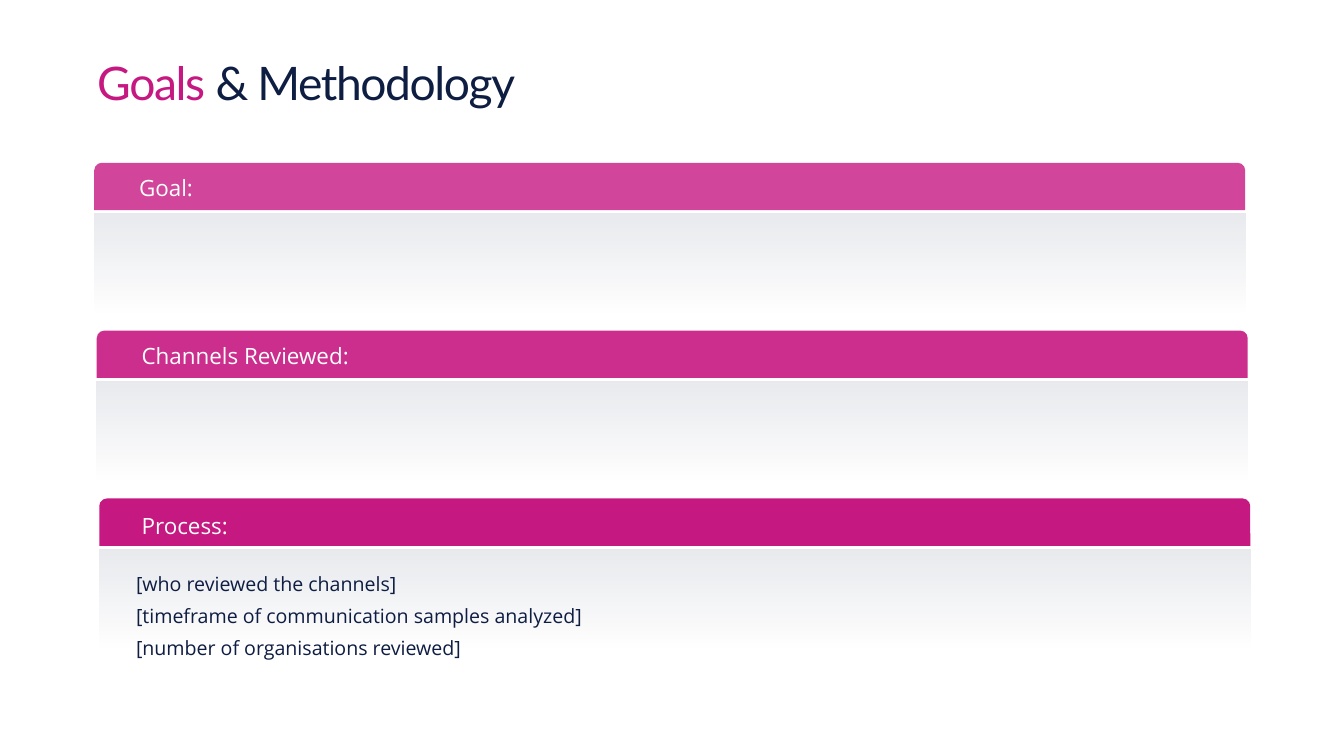
import dataclasses

import pptx
import pptx.dml.color
import pptx.enum.shapes
import pptx.enum.text
import pptx.oxml
import pptx.util

# The page is a grid of square cells, one inch each.
COLUMNS, ROWS = 26.67, 15
CELL = pptx.util.Inches(1)
COLORS = {"pink": "C61881", "navy": "0E1D42", "white": "FFFFFF"}
HEADER_ROWS, BODY_TOP, BODY_ROWS = 0.94, 1.01, 2.05
SECTION = {"left": 1.87, "top": 3.23, "width": 22.84, "height": 3.06}
STEP_RIGHT, STEP_DOWN = 0.05, 3.33

# heading, header opacity, heading offset (columns, rows), lines
SECTIONS = [
    ("Goal:", 80, (0.83, 0.18), []),
    ("Channels Reviewed:", 90, (0.83, 0.18), []),
    ("Process:", 100, (0.78, 0.21), [
        "[who reviewed the channels]",
        "[timeframe of communication samples analyzed]",
        "[number of organisations reviewed]",
    ]),
]


@dataclasses.dataclass
class Box:
    left: float
    top: float
    width: float
    height: float

    def inner(self, left, top, width, height):
        """Return a box placed relative to this one."""
        return Box(self.left + left, self.top + top, width, height)

    def lengths(self):
        return [round(value * CELL) for value in dataclasses.astuple(self)]


def rgb(name):
    return pptx.dml.color.RGBColor.from_string(COLORS[name])


def set_opacity(color_parent, percent):
    """Add an alpha value to every plain colour below an XML element."""
    for color in color_parent.xpath(".//a:srgbClr"):
        alpha = pptx.oxml.parse_xml(
            '<a:alpha xmlns:a="http://schemas.openxmlformats.org/drawingml/2006/main"'
            f' val="{percent * 1000}"/>')
        color.append(alpha)


def add_panel(page, box, kind):
    shape = page.shapes.add_shape(kind, *box.lengths())
    shape.shadow.inherit = False
    shape.line.fill.background()
    return shape


def add_text_frame(page, box, inset=0.06):
    frame = page.shapes.add_textbox(*box.lengths()).text_frame
    frame.word_wrap = True
    margin = round(inset * CELL)
    frame.margin_left = frame.margin_right = margin
    frame.margin_top = frame.margin_bottom = margin
    return frame


def add_span(para, text, size, font, color):
    span = para.add_run()
    span.text = text
    span.font.size = pptx.util.Pt(size)
    span.font.name = font
    span.font.color.rgb = rgb(color)
    return span


def add_title(page, box):
    para = add_text_frame(page, box).paragraphs[0]
    para.line_spacing = 0.8
    for text, color in (("Goals ", "pink"), ("& Methodology", "navy")):
        span = add_span(para, text, 66, "Lato", color)
        span.font._element.set("spc", "-200")


def add_header(page, box, heading, opacity, offset):
    kind = pptx.enum.shapes.MSO_SHAPE.ROUND_2_SAME_RECTANGLE
    header = add_panel(page, box, kind)
    header.adjustments[0] = 0.16
    header.fill.solid()
    header.fill.fore_color.rgb = rgb("pink")
    if opacity < 100:
        set_opacity(header._element.spPr, opacity)

    frame = add_text_frame(page, box.inner(*offset, 5.9, 0.64))
    frame.vertical_anchor = pptx.enum.text.MSO_ANCHOR.MIDDLE
    frame.auto_size = pptx.enum.text.MSO_AUTO_SIZE.SHAPE_TO_FIT_TEXT
    add_span(frame.paragraphs[0], heading, 32, "Open Sans", "white")


def add_body(page, box, lines):
    body = add_panel(page, box, pptx.enum.shapes.MSO_SHAPE.RECTANGLE)
    body.fill.gradient()
    body.fill.gradient_angle = 270
    for stop, position, opacity in zip(body.fill.gradient_stops, (0, 1), (10, 0)):
        stop.position = position
        stop.color.rgb = rgb("navy")
        set_opacity(stop._gs, opacity)

    if not lines:
        return
    frame = add_text_frame(page, box.inner(0.73, 0.45, 9.8, 1.75), inset=0)
    frame.auto_size = pptx.enum.text.MSO_AUTO_SIZE.SHAPE_TO_FIT_TEXT
    for index, line in enumerate(lines):
        para = frame.add_paragraph() if index else frame.paragraphs[0]
        para.space_before = pptx.util.Pt(12)
        add_span(para, line, 28, "Open Sans", "navy")


def add_section(page, box, heading, opacity, offset, lines):
    add_body(page, box.inner(0, BODY_TOP, box.width, BODY_ROWS), lines)
    add_header(page, box.inner(0, 0, box.width, HEADER_ROWS), heading, opacity, offset)


def main():
    deck = pptx.Presentation()
    deck.slide_width = round(COLUMNS * CELL)
    deck.slide_height = ROWS * CELL
    page = deck.slides.add_slide(deck.slide_layouts[6])

    add_title(page, Box(1.87, 1.24, 13.03, 1.26))
    first = Box(**SECTION)
    for index, section in enumerate(SECTIONS):
        box = first.inner(index * STEP_RIGHT, index * STEP_DOWN, first.width, first.height)
        add_section(page, box, *section)

    deck.save("out.pptx")


if __name__ == "__main__":
    main()
